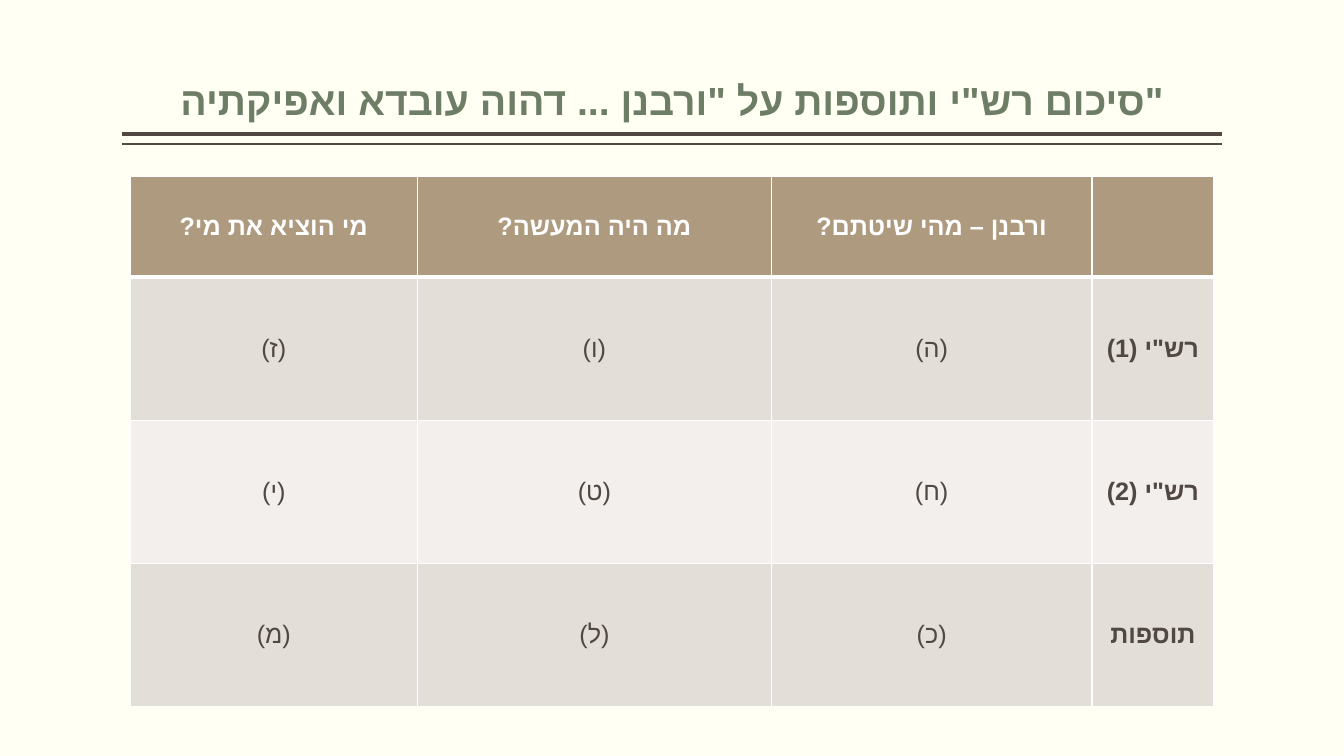
from lxml.etree import SubElement
from pptx import Presentation
from pptx.dml.color import RGBColor
from pptx.enum.shapes import MSO_CONNECTOR as Connector
from pptx.enum.text import MSO_ANCHOR as Anchor, MSO_AUTO_SIZE as AutoSize, PP_ALIGN as Align
from pptx.oxml.ns import qn
from pptx.util import Inches, Pt

SLIDE_WIDTH, SLIDE_HEIGHT = 13.33, 7.5
MARGIN = 1.21
CONTENT_WIDTH = SLIDE_WIDTH - 2 * MARGIN
TABLE_LEFT, TABLE_TOP = 1.29, 1.75
COLUMN_WIDTHS = [2.85, 3.51, 3.18, 1.21]
ROW_HEIGHTS = [1] + [1.42] * 3

COLORS = {
    "background": "FFFFF3",
    "title": "6D7D66",
    "text": "514843",
    "header": "AE9A7E",
    "odd row": "E3DED8",
    "even row": "F2EFEC",
    "white": "FFFFFF",
}

TITLE = 'סיכום רש"י ותוספות על "ורבנן ... דהוה עובדא ואפיקתיה"'
ROWS = [
    ["מי הוציא את מי?", "מה היה המעשה?", "ורבנן – מהי שיטתם?", ""],
    ["(ז)", "(ו)", "(ה)", 'רש"י (1)'],
    ["(י)", "(ט)", "(ח)", 'רש"י (2)'],
    ["(מ)", "(ל)", "(כ)", "תוספות"],
]


def color(name):
    return RGBColor.from_string(COLORS[name])


def write(paragraph, text, *, size, color_name, font="Lato", bold=False, rtl=False):
    paragraph.alignment = Align.CENTER
    if rtl:
        paragraph._p.get_or_add_pPr().set("rtl", "1")
    run = paragraph.add_run()
    run.text = text
    run.font.size = Pt(size)
    run.font.bold = bold
    run.font.name = font
    run.font.color.rgb = color(color_name)
    # Hebrew letters take the complex-script font
    SubElement(run.font._element, qn("a:cs"), typeface="Arial")


def add_title(slide):
    title = slide.shapes.title
    title.left, title.top = Inches(MARGIN), Inches(0.08)
    title.width, title.height = Inches(CONTENT_WIDTH), Inches(1.2)
    frame = title.text_frame
    frame.auto_size = AutoSize.NONE
    frame.word_wrap = True
    frame.vertical_anchor = Anchor.BOTTOM
    frame.margin_left = frame.margin_right = 0
    frame.margin_top = frame.margin_bottom = Inches(0.05)
    paragraph = frame.paragraphs[0]
    paragraph.line_spacing = 0.9
    write(paragraph, TITLE, size=28, color_name="title", font="Arial", bold=True)


def add_rule(slide, top, weight):
    rule = slide.shapes.add_connector(
        Connector.STRAIGHT, Inches(MARGIN), Inches(top),
        Inches(MARGIN + CONTENT_WIDTH), Inches(top))
    rule.line.color.rgb = color("text")
    rule.line.width = Pt(weight)
    SubElement(rule._element.spPr, qn("a:effectLst"))


def add_borders(cell, **weights):
    properties = cell._tc.get_or_add_tcPr()
    for side, weight in weights.items():
        line = SubElement(properties, qn(f"a:ln{side}"), w=str(Pt(weight)))
        fill = SubElement(line, qn("a:solidFill"))
        SubElement(fill, qn("a:srgbClr"), val=COLORS["white"])


def format_cell(cell, text, row, is_label):
    is_header = row == 0
    above = 3 if row == 1 else 1
    add_borders(cell, L=1, R=1, T=above, B=3 if is_header else 1)
    band = "header" if is_header else "odd row" if row % 2 else "even row"
    cell.fill.solid()
    cell.fill.fore_color.rgb = color(band)
    cell.vertical_anchor = Anchor.MIDDLE
    if text:
        write(cell.text_frame.paragraphs[0], text, size=18, rtl=True,
              color_name="white" if is_header else "text",
              bold=is_header or is_label)


def add_summary_table(slide):
    table = slide.shapes.add_table(
        len(ROWS), len(COLUMN_WIDTHS), Inches(TABLE_LEFT), Inches(TABLE_TOP),
        Inches(sum(COLUMN_WIDTHS)), Inches(sum(ROW_HEIGHTS))).table
    for column, width in zip(table.columns, COLUMN_WIDTHS):
        column.width = Inches(width)
    for row, height in zip(table.rows, ROW_HEIGHTS):
        row.height = Inches(height)
    for row, texts in enumerate(ROWS):
        for column, text in enumerate(texts):
            format_cell(table.cell(row, column), text, row,
                        is_label=column == len(texts) - 1)


def main():
    presentation = Presentation()
    presentation.slide_width = Inches(SLIDE_WIDTH)
    presentation.slide_height = Inches(SLIDE_HEIGHT)
    slide = presentation.slides.add_slide(
        presentation.slide_layouts.get_by_name("Title Only"))
    slide.background.fill.solid()
    slide.background.fill.fore_color.rgb = color("background")
    add_rule(slide, top=1.33, weight=3)
    add_rule(slide, top=1.43, weight=1)
    add_title(slide)
    add_summary_table(slide)
    presentation.save("out.pptx")


if __name__ == "__main__":
    main()
